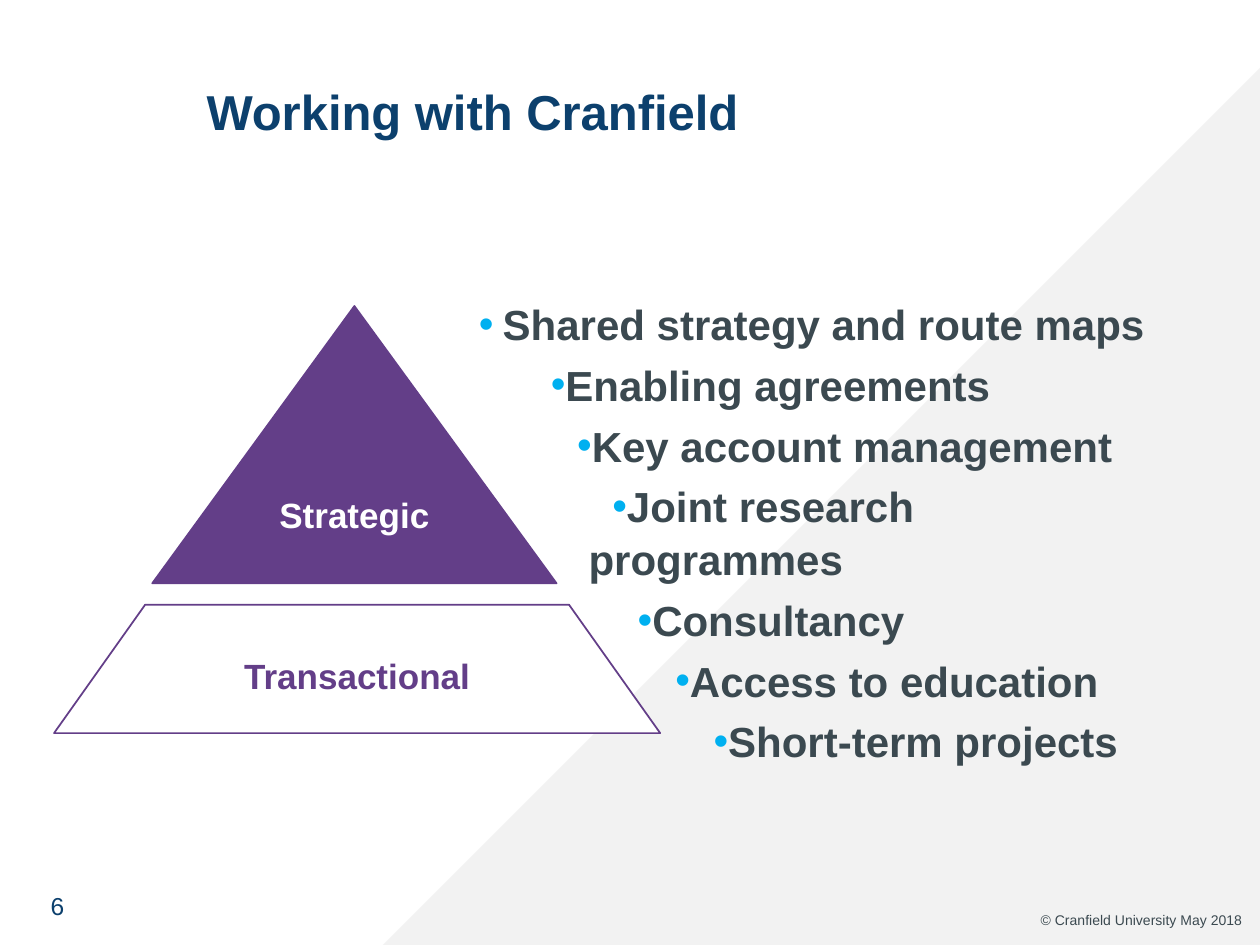
from lxml.etree import SubElement
from pptx import Presentation
from pptx.dml.color import RGBColor
from pptx.enum.shapes import MSO_SHAPE
from pptx.enum.text import MSO_ANCHOR, MSO_AUTO_SIZE, PP_ALIGN
from pptx.oxml.ns import qn
from pptx.util import Cm, Pt

COLORS = {
    "navy": "0C406D",
    "slate": "3B4950",
    "purple": "633E88",
    "cyan": "00B0F0",
    "grey": "F2F2F2",
    "white": "FFFFFF",
}

# Text, left margin and first-line indent in cm
STEPS = [
    ("Shared strategy and route maps", 0.76, -0.48),
    ("Enabling agreements", 0.99, 0.74),
    ("Key account management", 1.75, 0.51),
    ("Joint research programmes", 2.49, 0.48),
    ("Consultancy", 2.97, 0.51),
    ("Access to education", 3.73, 0.51),
    ("Short-term projects", 4.5, 0.51),
]


def color(name):
    return RGBColor.from_string(COLORS[name])


def write(para, text, size=20, ink="slate", bold=False,
          align=PP_ALIGN.LEFT, lead=1.0, before=0):
    para.alignment = align
    para.line_spacing = lead
    para.space_before = Pt(before)
    run = para.add_run()
    run.text = text
    font = run.font
    font.name, font.size, font.bold = "Arial", Pt(size), bold
    font.color.rgb = color(ink)


def bullet(para, left, indent):
    """Indent the paragraph (cm) and give it a cyan dot."""
    props = para._p.get_or_add_pPr()
    props.set("marL", str(Cm(left)))
    props.set("indent", str(Cm(indent)))
    tint = SubElement(props, qn("a:buClr"))
    SubElement(tint, qn("a:srgbClr"), val=COLORS["cyan"])
    SubElement(props, qn("a:buChar"), char="•")


class Deck:
    """Holds the presentation, the current slide and the shared style."""

    def __init__(self):
        self.prs = Presentation()
        self.prs.slide_width, self.prs.slide_height = Cm(25.4), Cm(19.05)
        self.slide = self.prs.slides.add_slide(self.prs.slide_layouts[1])

    def place(self, shape, box):
        shape.left, shape.top, shape.width, shape.height = map(Cm, box)

    def frame(self, shape, anchor=MSO_ANCHOR.MIDDLE):
        frame = shape.text_frame
        frame.word_wrap = True
        frame.auto_size = MSO_AUTO_SIZE.NONE
        frame.vertical_anchor = anchor
        return frame

    def title(self, text, box):
        shape = self.slide.shapes.title
        self.place(shape, box)
        write(self.frame(shape).paragraphs[0], text, size=28, ink="navy",
              bold=True, lead=0.9)

    def steps(self, items, box):
        shape = self.slide.placeholders[1]
        self.place(shape, box)
        frame = self.frame(shape, MSO_ANCHOR.TOP)
        for i, (text, left, indent) in enumerate(items):
            para = frame.add_paragraph() if i else frame.paragraphs[0]
            bullet(para, left, indent)
            write(para, text, size=24, bold=True, lead=1.05,
                  before=4.5 if i else 0)

    def label(self, text, box, inset=0.25, **style):
        shape = self.slide.shapes.add_textbox(*map(Cm, box))
        frame = self.frame(shape)
        frame.margin_left = frame.margin_right = Cm(inset)
        write(frame.paragraphs[0], text, **style)

    def shape(self, kind, box, fill, line=None):
        shape = self.slide.shapes.add_shape(kind, *map(Cm, box))
        shape.shadow.inherit = False
        shape.fill.solid()
        shape.fill.fore_color.rgb = color(fill)
        if line:
            shape.line.color.rgb = color(line)
            shape.line.width = Pt(1)
        else:
            shape.line.fill.background()
        return shape

    def corner(self, box):
        """Grey half-square behind everything else."""
        shape = self.shape(MSO_SHAPE.RIGHT_TRIANGLE, box, "grey")
        shape.element.spPr.get_or_add_xfrm().set("flipH", "1")
        self.slide.shapes.element.insert(2, shape.element)

    def tier(self, kind, text, box, fill, ink, slant=None):
        shape = self.shape(kind, box, fill, "purple")
        if slant:
            shape.adjustments[0] = slant
        write(self.frame(shape).paragraphs[0], text, ink=ink, bold=True,
              align=PP_ALIGN.CENTER)


def main():
    deck = Deck()
    deck.corner((7.7, 1.37, 17.7, 17.7))
    deck.title("Working with Cranfield", (3.91, 1.12, 20.65, 2.39))
    deck.steps(STEPS, (9.12, 5.84, 14.76, 9.45))
    deck.tier(MSO_SHAPE.ISOSCELES_TRIANGLE, "Strategic",
              (3.07, 6.17, 8.15, 5.59), "purple", "white")
    deck.tier(MSO_SHAPE.TRAPEZOID, "Transactional",
              (1.09, 12.19, 12.22, 2.59), "white", "purple", slant=0.71)
    deck.label("6", (0.84, 17.8, 1.04, 0.91), inset=0.18, size=14, ink="navy")
    deck.label("© Cranfield University May 2018", (19.3, 18.31, 6, 0.51),
               size=8, align=PP_ALIGN.RIGHT, lead=0.9)
    deck.prs.save("out.pptx")


if __name__ == "__main__":
    main()
